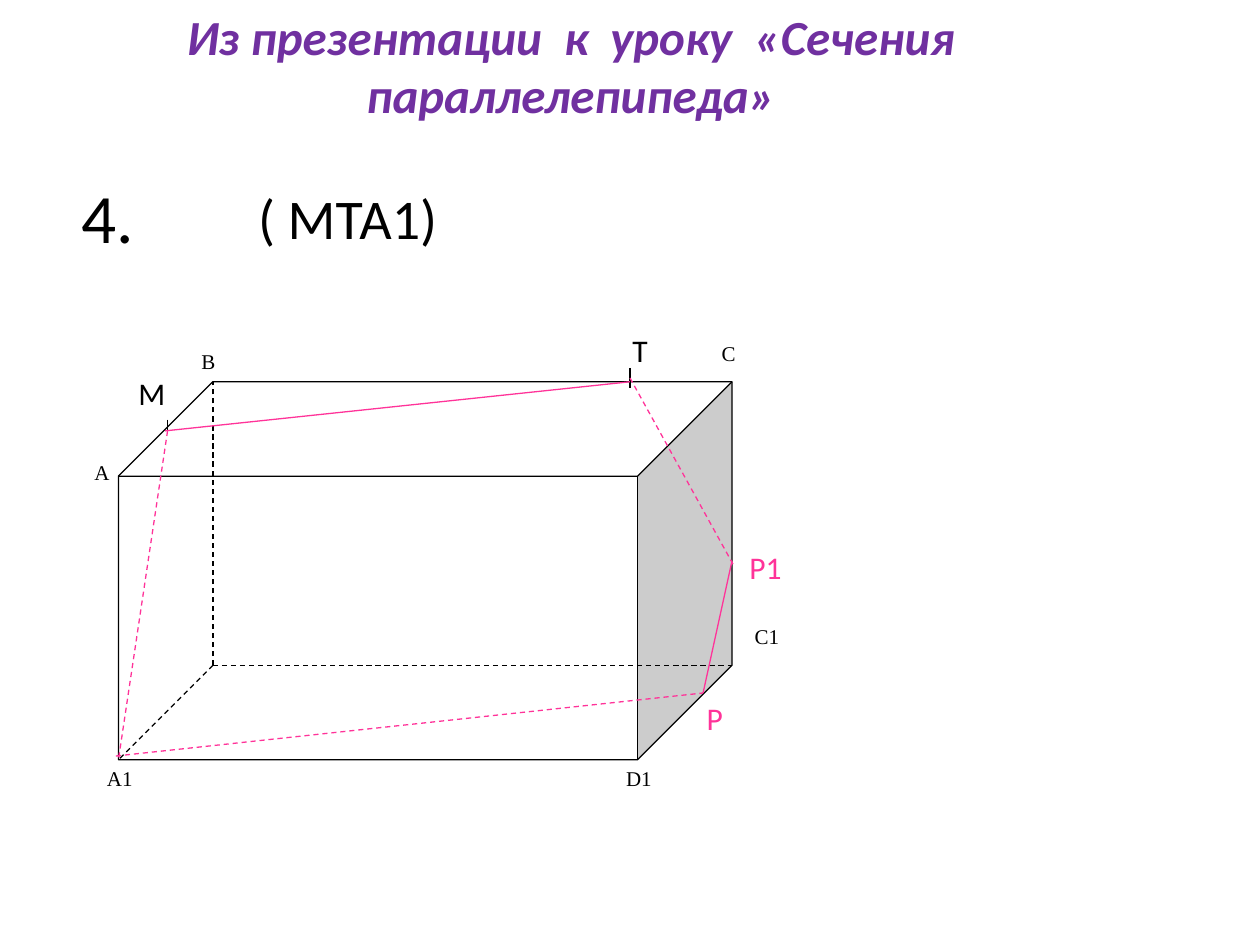
from dataclasses import dataclass

from lxml import etree
from pptx import Presentation
from pptx.dml.color import RGBColor
from pptx.enum import dml, shapes, text
from pptx.oxml import ns
from pptx.util import Inches, Pt


@dataclass(frozen=True)
class Theme:
    """Colours, fonts and type sizes of the slide."""
    ink: RGBColor = RGBColor(0, 0, 0)
    paper: RGBColor = RGBColor(255, 255, 255)
    section: RGBColor = RGBColor(0xFF, 0x33, 0x99)
    heading: RGBColor = RGBColor(0x70, 0x30, 0xA0)
    sans: str = "Calibri"
    serif: str = "Times New Roman"
    number_size: float = 39.6
    plane_size: float = 32
    heading_size: float = 28
    point_size: float = 18
    vertex_size: float = 12
    stroke: float = 0.75


THEME = Theme()
LEFT, RIGHT, TOP, BOTTOM, DEPTH = 0.94, 5.81, 3.03, 6.03, 0.75
VERTICES = [
    ("C1", 5.81, 4.9, 0.75, 0.75, 0.18),
    ("D1", 4.87, 6.03, 0.75, 0.56, 0.1),
    ("A1", 0.75, 6.03, 0.75, 0.56, 0.1),
    ("С", 5.63, 2.65, 0.37, 0.56, 0.1),
    ("А", 0.65, 3.6, 0.37, 0.56, 0.1),
    ("В", 1.5, 2.72, 0.38, 0.57, 0.1),
]
POINTS = [
    ("М", 1, 2.92, 0.45, THEME.ink),
    ("Т", 4.92, 2.58, 0.42, THEME.ink),
    ("Р", 5.51, 5.5, 0.42, THEME.section),
    ("Р1", 5.85, 4.3, 0.67, THEME.section),
]
TICKS = [((1.33, 3.33), (1.33, 3.42)), ((5, 2.92), (5, 3.08))]
SECTION_SIDES = [
    ((1.31, 3.42), (5, 3.03), False),
    ((1.33, 3.42), (0.94, 6.03), True),
    ((0.92, 6), (5.58, 5.5), True),
    ((5.58, 5.5), (5.81, 4.45), False),
    ((5, 3), (5.83, 4.5), True),
]


def write(shape, words, size, color=THEME.ink, font=THEME.sans,
          align=text.PP_ALIGN.LEFT, anchor=text.MSO_ANCHOR.TOP):
    """Set the text of a shape and return its formatted run."""
    frame = shape.text_frame
    frame.text = words
    frame.word_wrap = True
    frame.vertical_anchor = anchor
    para = frame.paragraphs[0]
    para.alignment = align
    span = para.runs[0]
    span.font.size = Pt(size)
    span.font.name = font
    span.font.color.rgb = color
    return span


def add_text(slide, words, left, top, width, height, size, **style):
    """Add a text box and return its run."""
    box = slide.shapes.add_textbox(*map(Inches, (left, top, width, height)))
    return write(box, words, size, **style)


def add_solid(slide, kind, left, top, width, height, line_color):
    """Add a white preset shape with a thin outline."""
    shape = slide.shapes.add_shape(kind, *map(Inches, (left, top, width, height)))
    shape.shadow.inherit = False
    shape.fill.solid()
    shape.fill.fore_color.rgb = THEME.paper
    shape.line.color.rgb = line_color
    shape.line.width = Pt(THEME.stroke)
    return shape


def add_vertex(slide, name, left, top, width, height, inset):
    """Add a white box that names a vertex."""
    box = add_solid(slide, shapes.MSO_SHAPE.RECTANGLE, left, top, width, height, THEME.paper)
    write(box, name, THEME.vertex_size, font=THEME.serif)
    box.text_frame.margin_left = Inches(inset)


def add_line(slide, start, end, color=THEME.ink, dashed=False):
    """Add a thin straight line, dashed where it is hidden."""
    line = slide.shapes.add_connector(
        shapes.MSO_CONNECTOR.STRAIGHT, *map(Inches, (*start, *end)))
    line.line.color.rgb = color
    line.line.width = Pt(THEME.stroke)
    if dashed:
        line.line.dash_style = dml.MSO_LINE.DASH
    etree.SubElement(line._element.spPr, ns.qn("a:effectLst"))


def add_number(slide):
    """Place the task number in the title placeholder."""
    title = slide.shapes.title
    title.left, title.top, title.width, title.height = map(Inches, (0.55, 1.33, 1.17, 0.77))
    write(title, "4.", THEME.number_size, anchor=text.MSO_ANCHOR.MIDDLE)


def add_box_figure(slide):
    """Draw the parallelepiped with its vertex names and hidden edges."""
    for vertex in VERTICES:
        add_vertex(slide, *vertex)
    cube = add_solid(slide, shapes.MSO_SHAPE.CUBE, LEFT, TOP, RIGHT - LEFT,
                     BOTTOM - TOP, THEME.ink)
    cube.adjustments[0] = DEPTH / (BOTTOM - TOP)
    corner = (LEFT + DEPTH, BOTTOM - DEPTH)
    for end in ((corner[0], TOP), (RIGHT, corner[1]), (LEFT, BOTTOM)):
        add_line(slide, corner, end, dashed=True)


def add_section(slide):
    """Draw the section with its ticks and named points."""
    for start, end in TICKS:
        add_line(slide, start, end)
    for start, end, dashed in SECTION_SIDES:
        add_line(slide, start, end, THEME.section, dashed)
    for name, left, top, width, color in POINTS:
        add_text(slide, name, left, top, width, 0.4, THEME.point_size, color=color)


def main():
    """Build and save the slide."""
    deck = Presentation()
    deck.slide_width, deck.slide_height = Inches(10), Inches(7.5)
    slide = deck.slides.add_slide(deck.slide_layouts[5])
    add_number(slide)
    add_text(slide, "( МТА1)", 1.95, 1.41, 2.81, 0.94, THEME.plane_size)
    add_box_figure(slide)
    add_section(slide)
    heading = add_text(slide, "Из презентации  к  уроку  «Сечения параллелепипеда»",
                       0, 0, 9.06, 1.04, THEME.heading_size, color=THEME.heading,
                       align=text.PP_ALIGN.CENTER)
    heading.font.bold = heading.font.italic = True
    deck.save("out.pptx")


if __name__ == "__main__":
    main()
